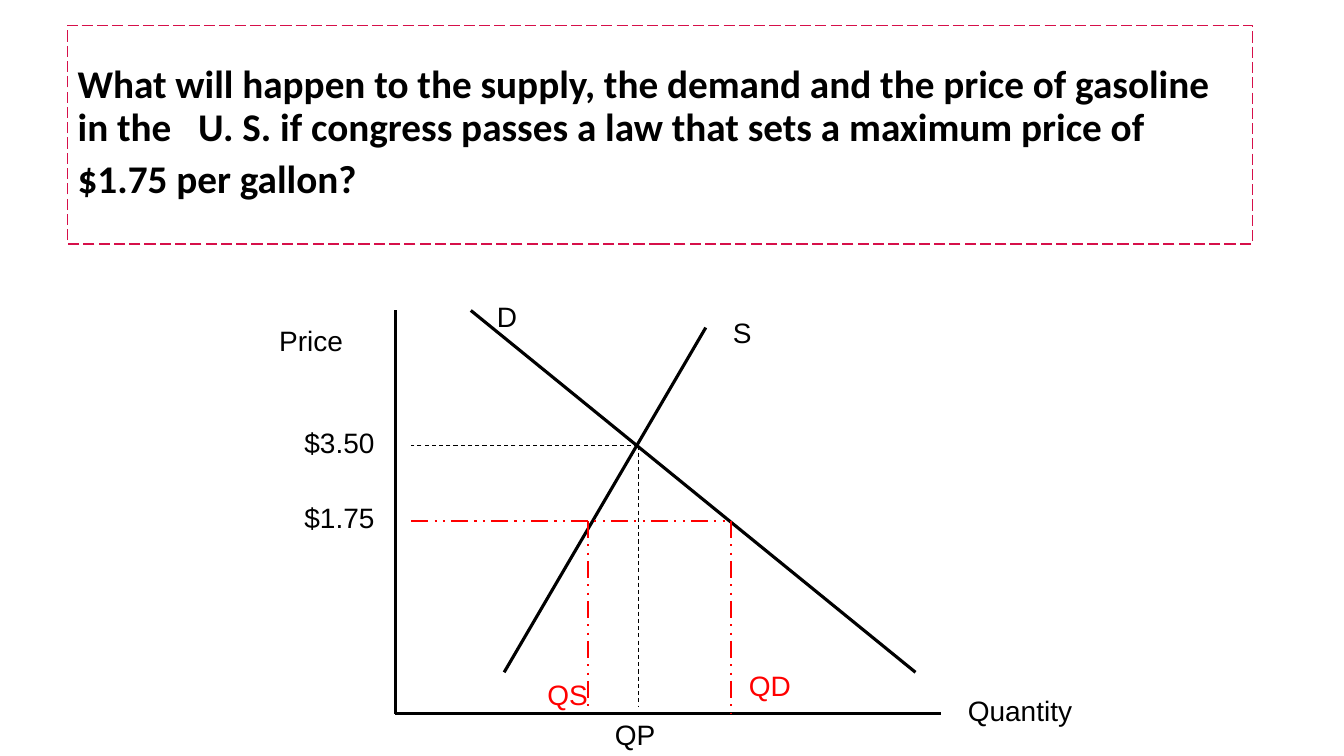
import pptx
import pptx.util
import pptx.dml.color
import pptx.enum.dml
import pptx.enum.shapes
import pptx.enum.text
import pptx.oxml.ns
import lxml.etree

PX = 9144
SLIDE = (1333, 750)
BLACK, RED, CRIMSON = "000000", "FF0000", "D6104A"

QUESTION = ("What will happen to the supply, the demand and the price of gasoline "
            "in the   U. S. if congress passes a law that sets a maximum price of "
            "$1.75 per gallon?")
QUESTION_BOX = (67, 25, 1175, 217)

ORIGIN = (392, 708)
AXIS_TOP, AXIS_RIGHT = 308, 933
GUIDE_LEFT, GUIDE_BOTTOM = 408, 700
EQUILIBRIUM = (633, 442)
CEILING, SUPPLIED, DEMANDED = 517, 583, 725

SOLID = (BLACK, 2.25, None)
MARKET = (BLACK, 0.75, "DASH")
CONTROL = (RED, 1.5, "DASH_DOT_DOT")

GRAPH_LINES = [
    ((ORIGIN[0], AXIS_TOP), ORIGIN, SOLID),
    (ORIGIN, (AXIS_RIGHT, ORIGIN[1]), SOLID),
    ((467, 308), (908, 667), SOLID),
    ((500, 667), (700, 325), SOLID),
    (EQUILIBRIUM, (GUIDE_LEFT, EQUILIBRIUM[1]), MARKET),
    (EQUILIBRIUM, (EQUILIBRIUM[0], GUIDE_BOTTOM), MARKET),
    ((GUIDE_LEFT, CEILING), (DEMANDED, CEILING), CONTROL),
    ((SUPPLIED, CEILING), (SUPPLIED, GUIDE_BOTTOM), CONTROL),
    ((DEMANDED, CEILING), (DEMANDED, ORIGIN[1]), CONTROL),
]

LABEL_HEIGHT = 43
GRAPH_LABELS = [
    ("Price", 267, 316, 108, BLACK),
    ("Quantity", 950, 683, 142, BLACK),
    ("D", 483, 292, 92, BLACK),
    ("S", 717, 308, 108, BLACK),
    ("$3.50", 292, 417, 92, BLACK),
    ("$1.75", 292, 492, 92, BLACK),
    ("QP", 600, 707, 83, BLACK),
    ("QS", 533, 667, 67, RED),
    ("QD", 733, 658, 75, RED),
]


def color(hex_text):
    return pptx.dml.color.RGBColor.from_string(hex_text)


def emu(lengths):
    return [length * PX for length in lengths]


def write(paragraph, text, size=20, font="Arial", fill=BLACK, bold=False):
    run = paragraph.add_run()
    run.text = text
    run.font.size = pptx.util.Pt(size)
    run.font.name = font
    run.font.bold = bold
    run.font.color.rgb = color(fill)


def style_line(line, fill, width, dash):
    line.color.rgb = color(fill)
    line.width = pptx.util.Pt(width)
    if dash:
        line.dash_style = pptx.enum.dml.MSO_LINE[dash]


def build_question(slide):
    question = slide.shapes.title
    question.left, question.top, question.width, question.height = emu(QUESTION_BOX)
    style_line(question.line, CRIMSON, 1, "LONG_DASH")
    frame = question.text_frame
    frame.word_wrap = True
    frame.auto_size = pptx.enum.text.MSO_AUTO_SIZE.NONE
    frame.vertical_anchor = pptx.enum.text.MSO_ANCHOR.MIDDLE
    paragraph = frame.paragraphs[0]
    paragraph.alignment = pptx.enum.text.PP_ALIGN.LEFT
    paragraph.line_spacing = 0.9
    write(paragraph, QUESTION, size=28, font="Calibri", bold=True)
    write(paragraph, " ", size=36, font="Calibri", bold=True)


def build_graph(slide):
    for start, end, style in GRAPH_LINES:
        segment = slide.shapes.add_connector(
            pptx.enum.shapes.MSO_CONNECTOR.STRAIGHT, *emu(start + end))
        style_line(segment.line, *style)
        lxml.etree.SubElement(segment._element.spPr, pptx.oxml.ns.qn("a:effectLst"))
    for text, left, top, width, fill in GRAPH_LABELS:
        label = slide.shapes.add_textbox(*emu((left, top, width, LABEL_HEIGHT)))
        label.text_frame.word_wrap = True
        write(label.text_frame.paragraphs[0], text, fill=fill)


def main():
    deck = pptx.Presentation()
    deck.slide_width, deck.slide_height = emu(SLIDE)
    slide = deck.slides.add_slide(deck.slide_layouts.get_by_name("Title Only"))
    build_question(slide)
    build_graph(slide)
    deck.save("out.pptx")


if __name__ == "__main__":
    main()
